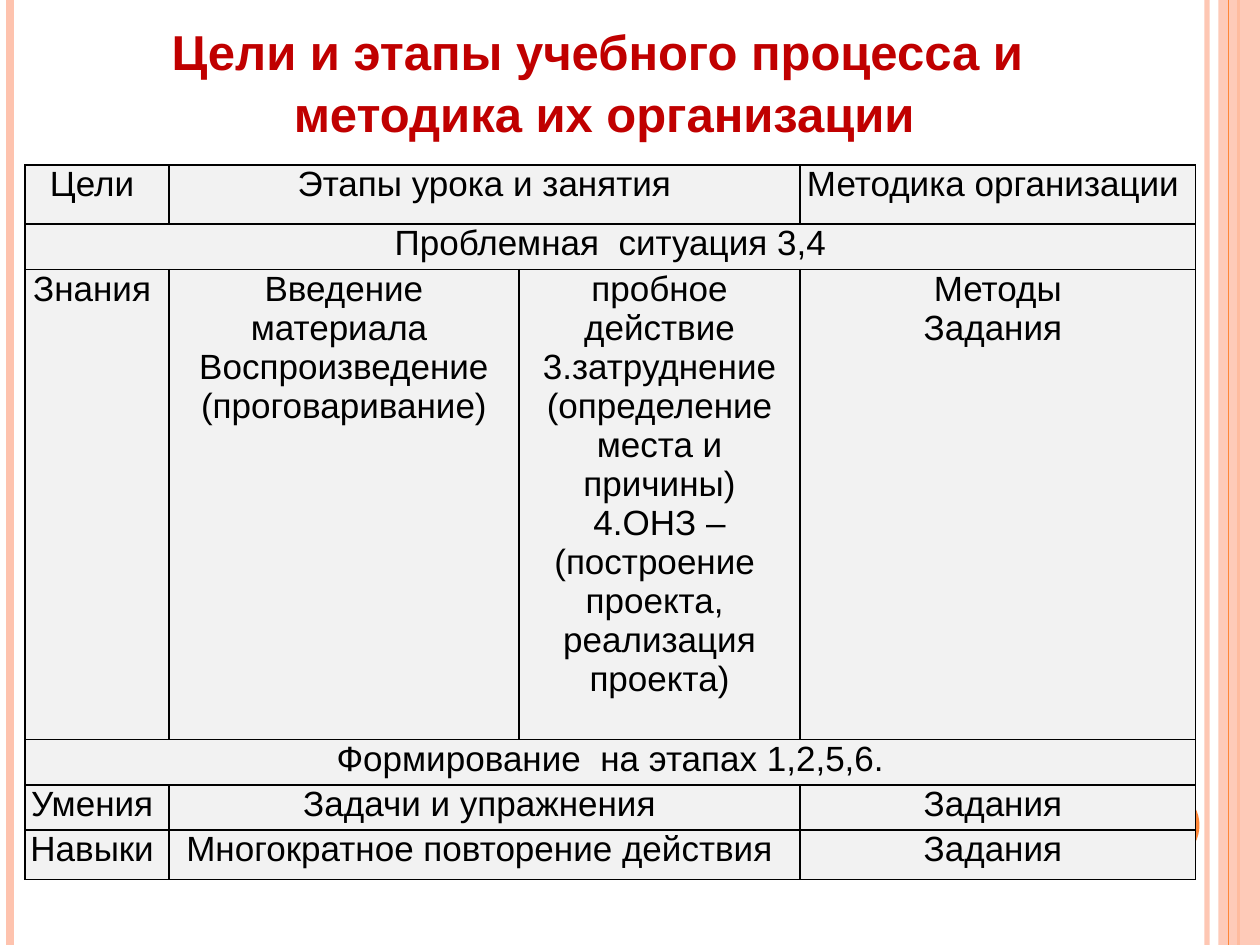
from lxml.etree import SubElement as Sub
from pptx import Presentation
from pptx.dml.color import RGBColor as RGB
from pptx.enum.shapes import MSO_CONNECTOR as Link, MSO_SHAPE as Kind
from pptx.enum.text import MSO_ANCHOR as Anchor, PP_ALIGN as Align
from pptx.oxml import parse_xml
from pptx.oxml.ns import nsdecls, qn
from pptx.util import Inches, Pt

THEME = {
    "font": "Arial", "head": 28, "body": 20,
    "red": "C00000", "ink": "000000", "cell": "F2F2F2",
    "peach": "FEC3AE", "orange": "FE8637",
}
TITLE = "Цели и этапы учебного процесса и \vметодика их организации"
COLS = [1.14, 2.78, 2.23, 3.14]
ROWS = [
    (0.47, [("Цели ", 1), ("Этапы урока и занятия", 2), ("Методика организации ", 1)]),
    (0.36, [("Проблемная  ситуация 3,4", 4)]),
    (3.73, [
        ("Знания ", 1),
        ("Введение материала \nВоспроизведение (проговаривание)", 1),
        ("пробное действие\n3.затруднение (определение места и причины)\n"
         "4.ОНЗ – (построение \nпроекта,  реализация проекта)", 1),
        ("Методы\nЗадания ", 1),
    ]),
    (0.36, [("Формирование  на этапах 1,2,5,6.", 4)]),
    (0.36, [("Умения ", 1), ("Задачи и упражнения ", 2), ("Задания ", 1)]),
    (0.39, [("Навыки ", 1), ("Многократное повторение действия ", 2), ("Задания ", 1)]),
]
BACK = [(9.58, "peach", 3, 93), (0.08, "peach", 4.5, 100), (9.83, "orange", 1.5, 100)]
FRONT = [(9.75, "orange", 0.75, 100)]


def tone(name):
    return RGB.from_string(THEME[name])


def fade(fill, alpha):
    color = fill._xPr.find(qn("a:solidFill"))[0]
    Sub(color, qn("a:alpha"), val=str(alpha * 1000))


def style(frame, size, color, bold=False):
    for para in frame.paragraphs:
        para.alignment = Align.CENTER
        font = para.font
        font.name, font.size, font.bold = THEME["font"], Pt(THEME[size]), bold
        font.color.rgb = tone(color)


def stripes(slide, items):
    for x, color, width, alpha in items:
        line = slide.shapes.add_connector(
            Link.STRAIGHT, Inches(x), Inches(0), Inches(x), Inches(7.5))
        line.line.width = Pt(width)
        line.line.color.rgb = tone(color)
        if alpha < 100:
            fade(line.line.fill, alpha)
        Sub(line._element.spPr, qn("a:effectLst"))


def block(slide, kind, box, color, alpha=100):
    shape = slide.shapes.add_shape(kind, *map(Inches, box))
    shape.shadow.inherit = False
    shape.line.fill.background()
    shape.fill.solid()
    shape.fill.fore_color.rgb = tone(color)
    if alpha < 100:
        fade(shape.fill, alpha)


def title(slide):
    box = slide.shapes.add_textbox(*map(Inches, (0.2, 0.05, 9.19, 1.13)))
    frame = box.text_frame
    frame.word_wrap = True
    frame.vertical_anchor = Anchor.BOTTOM
    frame.text = TITLE
    frame.paragraphs[0].line_spacing = 1.05
    style(frame, "head", "red", True)


def dress(cell):
    cell.margin_left = cell.margin_right = Inches(0.03)
    cell.margin_top = cell.margin_bottom = 0
    props = cell._tc.get_or_add_tcPr()
    for side in "LRTB":
        props.append(parse_xml(
            f'<a:ln{side} {nsdecls("a")} w="{Pt(1)}"><a:solidFill>'
            f'<a:srgbClr val="{THEME["ink"]}"/></a:solidFill></a:ln{side}>'))
    cell.fill.solid()
    cell.fill.fore_color.rgb = tone("cell")
    style(cell.text_frame, "body", "ink")


def grid(slide):
    high = sum(h for h, _ in ROWS)
    table = slide.shapes.add_table(
        len(ROWS), len(COLS), Inches(0.2), Inches(1.31),
        Inches(sum(COLS)), Inches(high)).table
    table.first_row = table.horz_banding = False
    for col, width in zip(table.columns, COLS):
        col.width = Inches(width)
    for r, (height, cells) in enumerate(ROWS):
        table.rows[r].height = Inches(height)
        c = 0
        for text, span in cells:
            cell = table.cell(r, c)
            cell.text = text
            if span > 1:
                cell.merge(table.cell(r, c + span - 1))
            c += span
    for cell in table.iter_cells():
        dress(cell)


def main():
    deck = Presentation()
    deck.slide_width, deck.slide_height = Inches(10), Inches(7.5)
    slide = deck.slides.add_slide(deck.slide_layouts[6])
    stripes(slide, BACK)
    block(slide, Kind.RECTANGLE, (9.67, 0, 0.33, 7.5), "peach", 87)
    stripes(slide, FRONT)
    block(slide, Kind.OVAL, (8.92, 6.25, 0.6, 0.6), "orange")
    title(slide)
    grid(slide)
    deck.save("out.pptx")


if __name__ == "__main__":
    main()
